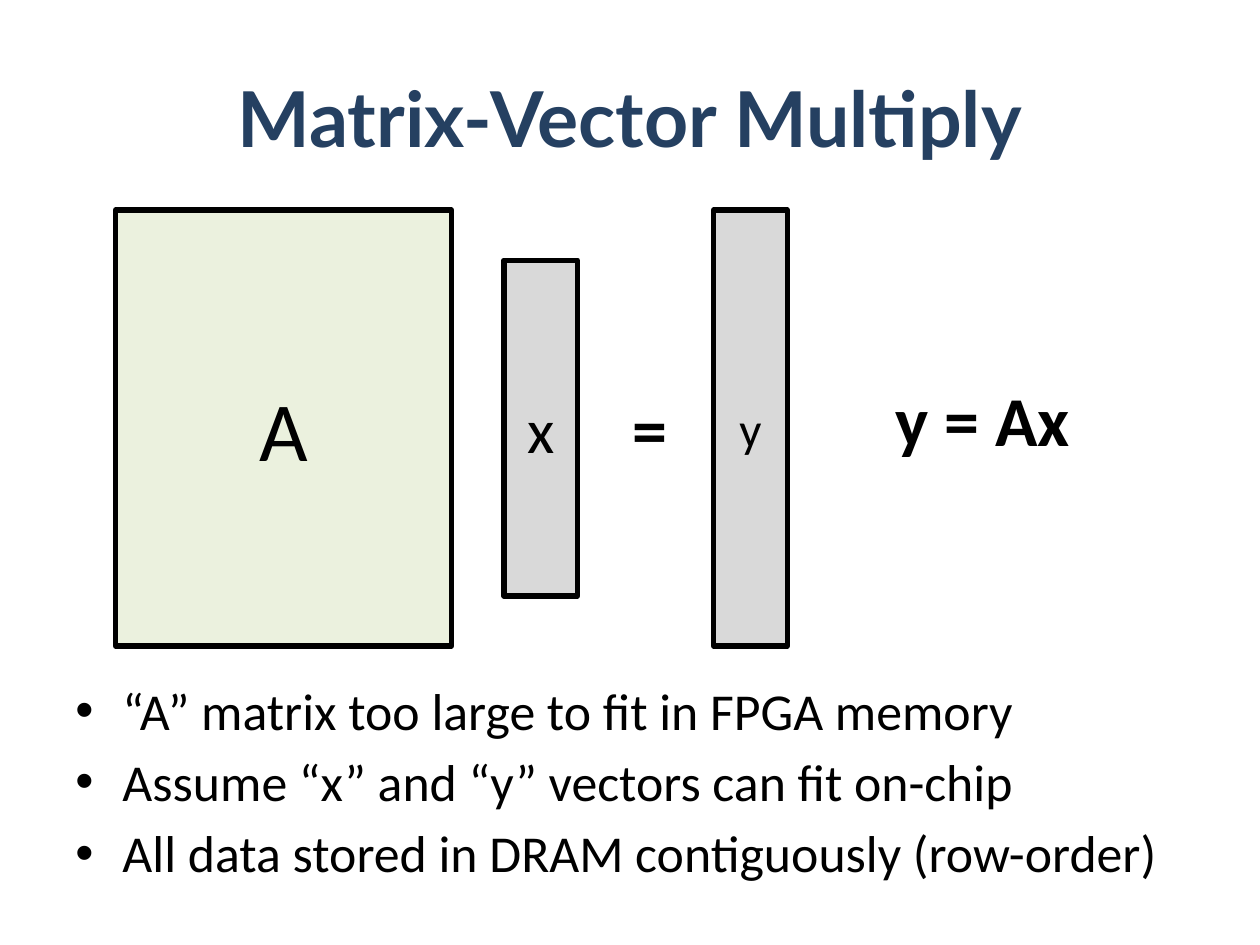
from dataclasses import dataclass

from lxml import etree
from pptx import Presentation
from pptx.dml.color import RGBColor
from pptx.enum.shapes import MSO_SHAPE
from pptx.enum.text import MSO_ANCHOR, PP_ALIGN
from pptx.oxml.ns import qn
from pptx.util import Cm, Pt

RECTANGLE = MSO_SHAPE.RECTANGLE
TOP, MIDDLE = MSO_ANCHOR.TOP, MSO_ANCHOR.MIDDLE
LEFT, CENTER = PP_ALIGN.LEFT, PP_ALIGN.CENTER


@dataclass(frozen=True)
class Theme:
    heading_font: str = "Lato"
    body_font: str = "Calibri"
    heading: str = "254061"
    ink: str = "000000"
    matrix: str = "EBF1DE"
    vector: str = "D9D9D9"
    heading_size: float = 44
    formula_size: float = 40
    bullet_size: float = 29.6
    bullet_gap: float = 5.3
    outline: float = 3


THEME = Theme()
TITLE = "Matrix-Vector Multiply"
ROWS, COLUMNS, VECTOR_WIDTH = 8.79, 6.77, 1.48
DIAGRAM_MIDDLE = 8.63
OPERANDS = [
    ("A", 2.33, COLUMNS, ROWS, THEME.matrix, 48),
    ("x", 10.16, VECTOR_WIDTH, COLUMNS, THEME.vector, 36),
    ("y", 14.39, VECTOR_WIDTH, ROWS, THEME.vector, 28),
]
FORMULAS = [
    ("=", 12.49, 7.65, 1.22),
    ("y = Ax", 17.78, 7.47, 4.06),
]
FORMULA_HEIGHT = 1.96
POINTS = [
    "“A” matrix too large to fit in FPGA memory",
    "Assume “x” and “y” vectors can fit on-chip",
    "All data stored in DRAM contiguously (row-order)",
]
BULLET_INDENT = Cm(0.95)


def write(paragraph, text, size, align=CENTER, font=THEME.body_font,
          color=THEME.ink, bold=False):
    paragraph.alignment = align
    run = paragraph.add_run()
    run.text = text
    run.font.name = font
    run.font.size = Pt(size)
    run.font.bold = bold
    run.font.color.rgb = RGBColor.from_string(color)


def add_text_frame(slide, left, top, width, height, anchor=TOP, wrap=True):
    frame = slide.shapes.add_textbox(
        Cm(left), Cm(top), Cm(width), Cm(height)).text_frame
    frame.word_wrap = wrap
    frame.vertical_anchor = anchor
    return frame


def add_operand(slide, label, left, width, height, fill, size):
    block = slide.shapes.add_shape(
        RECTANGLE, Cm(left), Cm(DIAGRAM_MIDDLE - height / 2),
        Cm(width), Cm(height))
    block.shadow.inherit = False
    block.fill.solid()
    block.fill.fore_color.rgb = RGBColor.from_string(fill)
    block.line.color.rgb = RGBColor.from_string(THEME.ink)
    block.line.width = Pt(THEME.outline)
    block.text_frame.vertical_anchor = MIDDLE
    write(block.text_frame.paragraphs[0], label, size)


def add_bullet(paragraph):
    paragraph.space_before = Pt(THEME.bullet_gap)
    properties = paragraph._p.get_or_add_pPr()
    properties.set("marL", str(BULLET_INDENT))
    properties.set("indent", str(-BULLET_INDENT))
    etree.SubElement(properties, qn("a:buFont"), typeface="Arial")
    etree.SubElement(properties, qn("a:buChar"), char="•")


def main():
    deck = Presentation()
    deck.slide_width, deck.slide_height = Cm(25.4), Cm(19.05)
    slide = deck.slides.add_slide(deck.slide_layouts[6])

    title = add_text_frame(slide, 0, 0.76, 25.4, 3.18, MIDDLE)
    write(title.paragraphs[0], TITLE, THEME.heading_size,
          font=THEME.heading_font, color=THEME.heading, bold=True)

    for operand in OPERANDS:
        add_operand(slide, *operand)

    for formula, left, top, width in FORMULAS:
        frame = add_text_frame(
            slide, left, top, width, FORMULA_HEIGHT, wrap=False)
        write(frame.paragraphs[0], formula, THEME.formula_size, bold=True)

    body = add_text_frame(slide, 1.27, 13.55, 22.86, 4.45)
    for index, point in enumerate(POINTS):
        paragraph = body.add_paragraph() if index else body.paragraphs[0]
        add_bullet(paragraph)
        write(paragraph, point, THEME.bullet_size, LEFT)

    deck.save("out.pptx")


if __name__ == "__main__":
    main()
